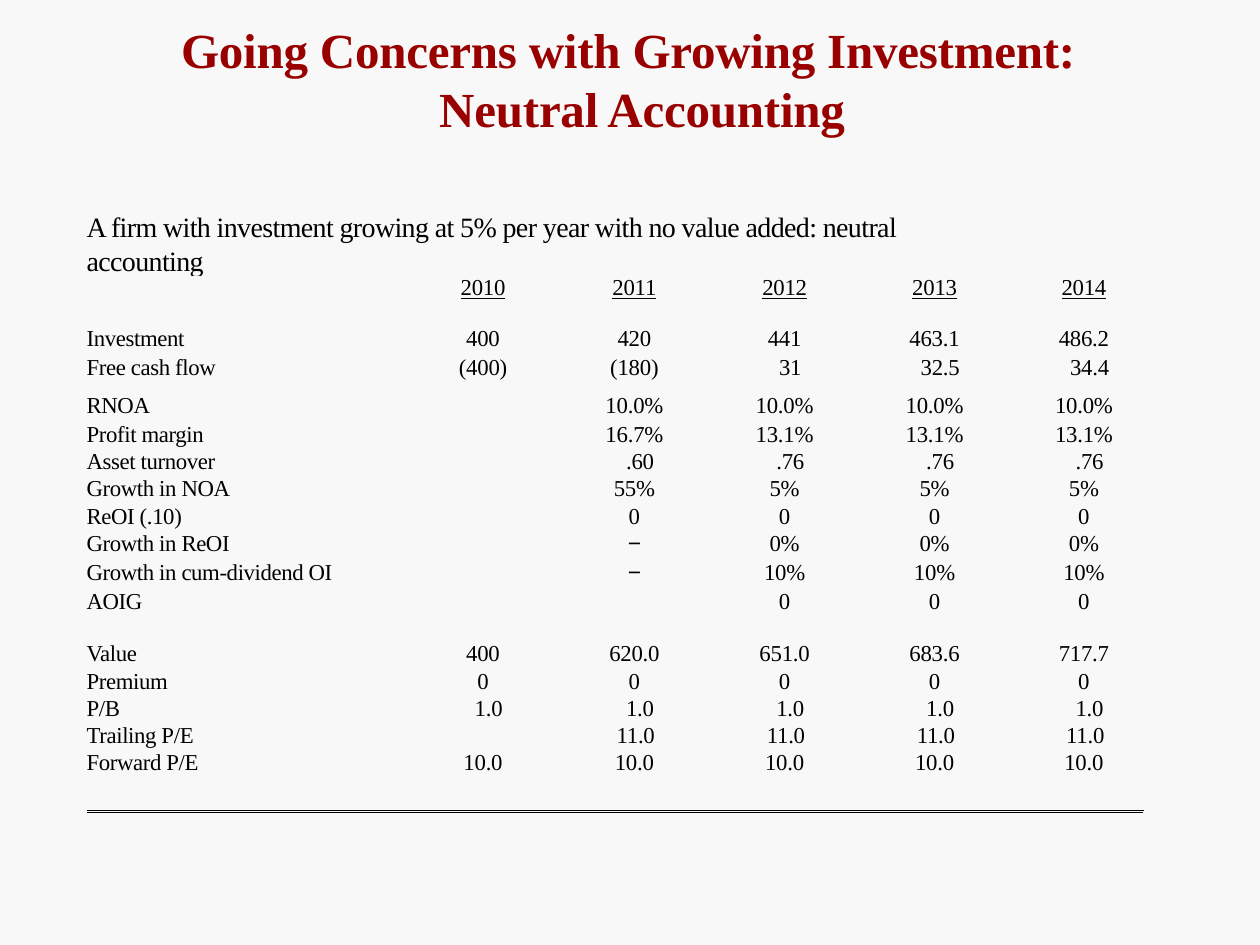
import pptx
import pptx.dml.color
import pptx.enum.shapes
import pptx.enum.text
import pptx.oxml.ns
import pptx.util
from dataclasses import dataclass
from lxml import etree

Pt = pptx.util.Pt
RGB = pptx.dml.color.RGBColor
qn = pptx.oxml.ns.qn
ALIGN = pptx.enum.text.PP_ALIGN


@dataclass(frozen=True)
class Theme:
    back: str = "F8F8F8"
    head: str = "990000"
    ink: str = "000000"
    font: str = "Times New Roman"
    sign: str = "Arial"
    big: float = 28
    mid: float = 16
    small: float = 13
    lead: float = 14.4


THEME = Theme()
PLAIN = "{2D5ABB26-0587-4C30-8999-92F81FD0307C}"
COLS = (180, 91, 87, 85.7, 85.7, 62)
SHIFTS = (6, 1, 0, 0, 23)
HIGH = {"head": 22.3, "gap": 23, "row": 15.3, "sign": 16.5}
ROWS = (
    ("head", 0, "", "2010", "2011", "2012", "2013", "2014"),
    ("gap", 0, "Investment", "400", "420", "441", "463.1", "486.2"),
    ("row", 6.5, "Free cash flow", "(400)", "(180)", "31", "32.5", "34.4"),
    ("gap", 0, "RNOA", "", "10.0%", "10.0%", "10.0%", "10.0%"),
    ("row", 0, "Profit margin", "", "16.7%", "13.1%", "13.1%", "13.1%"),
    ("row", 6.5, "Asset turnover", "", ".60", ".76", ".76", ".76"),
    ("row", 0, "Growth in NOA", "", "55%", "5%", "5%", "5%"),
    ("row", 0, "ReOI (.10)", "", "0", "0", "0", "0"),
    ("sign", 0, "Growth in ReOI", "", "−", "0%", "0%", "0%"),
    ("sign", 0, "Growth in cum-dividend OI", "", "−", "10%", "10%", "10%"),
    ("gap", 0, "AOIG", "", "", "0", "0", "0"),
    ("gap", 0, "Value", "400", "620.0", "651.0", "683.6", "717.7"),
    ("row", 0, "Premium", "0", "0", "0", "0", "0"),
    ("row", 6.5, "P/B", "1.0", "1.0", "1.0", "1.0", "1.0"),
    ("row", 1.5, "Trailing P/E", "", "11.0", "11.0", "11.0", "11.0"),
    ("row", 0, "Forward P/E", "10.0", "10.0", "10.0", "10.0", "10.0"),
)


def write(frame, text, size, color=THEME.ink, font=THEME.font, bold=False,
          under=False, align=ALIGN.LEFT, left=0, indent=0, track=0, lead=None):
    para = frame.paragraphs[0]
    para.alignment = align
    if lead:
        para.line_spacing = Pt(lead)
    props = para._p.get_or_add_pPr()
    props.set("marL", str(Pt(left)))
    props.set("indent", str(Pt(indent)))
    if not text:
        end = etree.SubElement(para._p, qn("a:endParaRPr"))
        end.set("sz", str(int(size * 100)))
        return
    run = para.add_run()
    run.text = text
    run.font.size = Pt(size)
    run.font.name = font
    run.font.bold = bold
    run.font.underline = under
    run.font.color.rgb = RGB.from_string(color)
    run._r.get_or_add_rPr().set("spc", str(round(track * 100)))


def label(slide, box, text, size, **form):
    frame = slide.shapes.add_textbox(*map(Pt, box)).text_frame
    frame.word_wrap = True
    frame.margin_left = frame.margin_right = frame.margin_bottom = 0
    frame.margin_top = Pt(1.5)
    write(frame, text, size, **form)


def title(slide, box):
    label(slide, box, "Going Concerns with Growing Investment: Neutral Accounting",
          THEME.big, color=THEME.head, bold=True, left=154, indent=-147.5,
          track=-0.1)


def intro(slide, box):
    label(slide, box, "A firm with investment growing at 5% per year with no "
          "value added: neutral accounting", THEME.mid, track=-0.35)


def grid(slide, box):
    table = slide.shapes.add_table(len(ROWS), len(COLS), *map(Pt, box)).table
    table.first_row = table.horz_banding = False
    table._tbl.tblPr.find(qn("a:tableStyleId")).text = PLAIN
    for col, width in zip(table.columns, COLS):
        col.width = Pt(width)
    for row, (kind, shift, *texts) in zip(table.rows, ROWS):
        row.height = Pt(HIGH[kind])
        for num, (cell, text) in enumerate(zip(row.cells, texts)):
            cell.margin_left = cell.margin_right = cell.margin_bottom = 0
            spaced = kind == "gap" and texts[0] != "AOIG"
            cell.margin_top = Pt(6.5 if spaced else 0)
            cell.fill.solid()
            cell.fill.fore_color.rgb = RGB.from_string(THEME.back)
            if num == 0:
                form = dict(left=2, track=-0.2)
            else:
                move = 0 if text.startswith("(") else shift
                form = dict(left=SHIFTS[num - 1] + move, track=-0.1,
                            align=ALIGN.CENTER, under=kind == "head",
                            font=THEME.sign if text == "−" else THEME.font)
            write(cell.text_frame, text, THEME.small, lead=THEME.lead, **form)


def rules(slide, box):
    left, top, width, height = box
    for y, wide, thick in ((top + height, width - 0.7, 0.5), (top, width, 0.64)):
        line = slide.shapes.add_connector(
            pptx.enum.shapes.MSO_CONNECTOR.STRAIGHT,
            Pt(left), Pt(y), Pt(left + wide), Pt(y))
        line.line.color.rgb = RGB.from_string(THEME.ink)
        line.line.width = Pt(thick)
        etree.SubElement(line._element.spPr, qn("a:effectLst"))


def main():
    deck = pptx.Presentation()
    deck.slide_width, deck.slide_height = Pt(720), Pt(540)
    slide = deck.slides.add_slide(deck.slide_layouts[6])
    fill = slide.background.fill
    fill.solid()
    fill.fore_color.rgb = RGB.from_string(THEME.back)
    title(slide, (97, 9.5, 526, 69))
    intro(slide, (49.5, 118.5, 525, 40))
    grid(slide, (47.5, 157.5, sum(COLS), sum(HIGH[row[0]] for row in ROWS)))
    rules(slide, (49.7, 463.4, 604, 1))
    deck.save("out.pptx")


if __name__ == "__main__":
    main()
